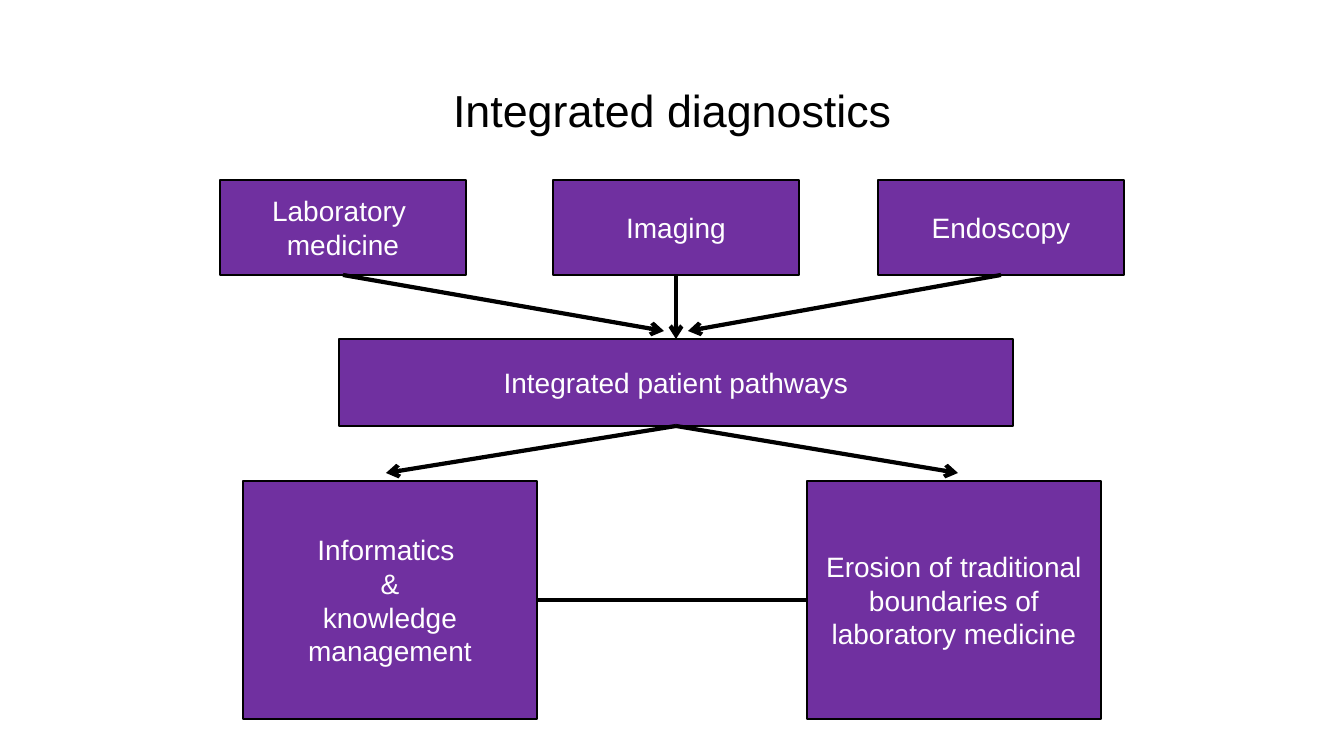
from pptx import Presentation
from pptx.dml.color import RGBColor
from pptx.enum.shapes import MSO_CONNECTOR as Connector, MSO_SHAPE as Shape
from pptx.enum.text import MSO_ANCHOR as Anchor, PP_ALIGN as Align
from pptx.oxml.ns import qn
from pptx.util import Pt
from lxml import etree

EMU_PER_PX = 914400 / 100.8
TOP, BOTTOM = 0, 2
LEFT, RIGHT = 1, 3


def px(*lengths):
    return [round(length * EMU_PER_PX) for length in lengths]


def style_text(frame, size, color):
    frame.word_wrap = True
    frame.vertical_anchor = Anchor.MIDDLE
    for paragraph in frame.paragraphs:
        paragraph.alignment = Align.CENTER
        paragraph.font.name = "Arial"
        paragraph.font.size = Pt(size)
        paragraph.font.color.rgb = RGBColor.from_string(color)


presentation = Presentation()
presentation.slide_width, presentation.slide_height = px(1344, 756)
slide = presentation.slides.add_slide(presentation.slide_layouts[5])

title = slide.shapes.title
title.left, title.top, title.width, title.height = px(93, 40, 1159, 146)
title.text_frame.text = "Integrated diagnostics"
title.text_frame.paragraphs[0].line_spacing = 0.9
style_text(title.text_frame, 32, "000000")

boxes = {}
for name, text, bounds in [
    ("pathways", "Integrated patient pathways", (339, 339, 674, 87)),
    ("laboratory", "Laboratory \nmedicine", (220, 180, 246, 95)),
    ("imaging", "Imaging", (553, 180, 246, 95)),
    ("endoscopy", "Endoscopy", (878, 180, 246, 95)),
    ("informatics", "Informatics \n&\nknowledge management", (243, 481, 294, 238)),
    ("erosion", "Erosion of traditional boundaries of laboratory medicine", (807, 481, 294, 238)),
]:
    box = slide.shapes.add_shape(Shape.RECTANGLE, *px(*bounds))
    box.shadow.inherit = False
    box.fill.solid()
    box.fill.fore_color.rgb = RGBColor.from_string("7030A0")
    box.line.color.rgb = RGBColor.from_string("000000")
    box.line.width = Pt(1)
    box.text_frame.text = text
    style_text(box.text_frame, 20, "FFFFFF")
    boxes[name] = box

for start, start_side, target, has_arrow in [
    ("informatics", RIGHT, ("erosion", LEFT), False),
    ("imaging", BOTTOM, ("pathways", TOP), True),
    ("laboratory", BOTTOM, (664, 331), True),
    ("endoscopy", BOTTOM, (688, 331), True),
    ("pathways", BOTTOM, (386, 473), True),
    ("pathways", BOTTOM, (958, 473), True),
]:
    connector = slide.shapes.add_connector(Connector.STRAIGHT, 0, 0, 0, 0)
    connector.begin_connect(boxes[start], start_side)
    if target[0] in boxes:
        connector.end_connect(boxes[target[0]], target[1])
    else:
        connector.end_x, connector.end_y = px(*target)
    connector.line.color.rgb = RGBColor.from_string("000000")
    connector.line.width = Pt(3)
    if has_arrow:
        etree.SubElement(connector.line._get_or_add_ln(), qn("a:tailEnd"), type="arrow")
    etree.SubElement(connector._element.spPr, qn("a:effectLst"))

presentation.save("out.pptx")
